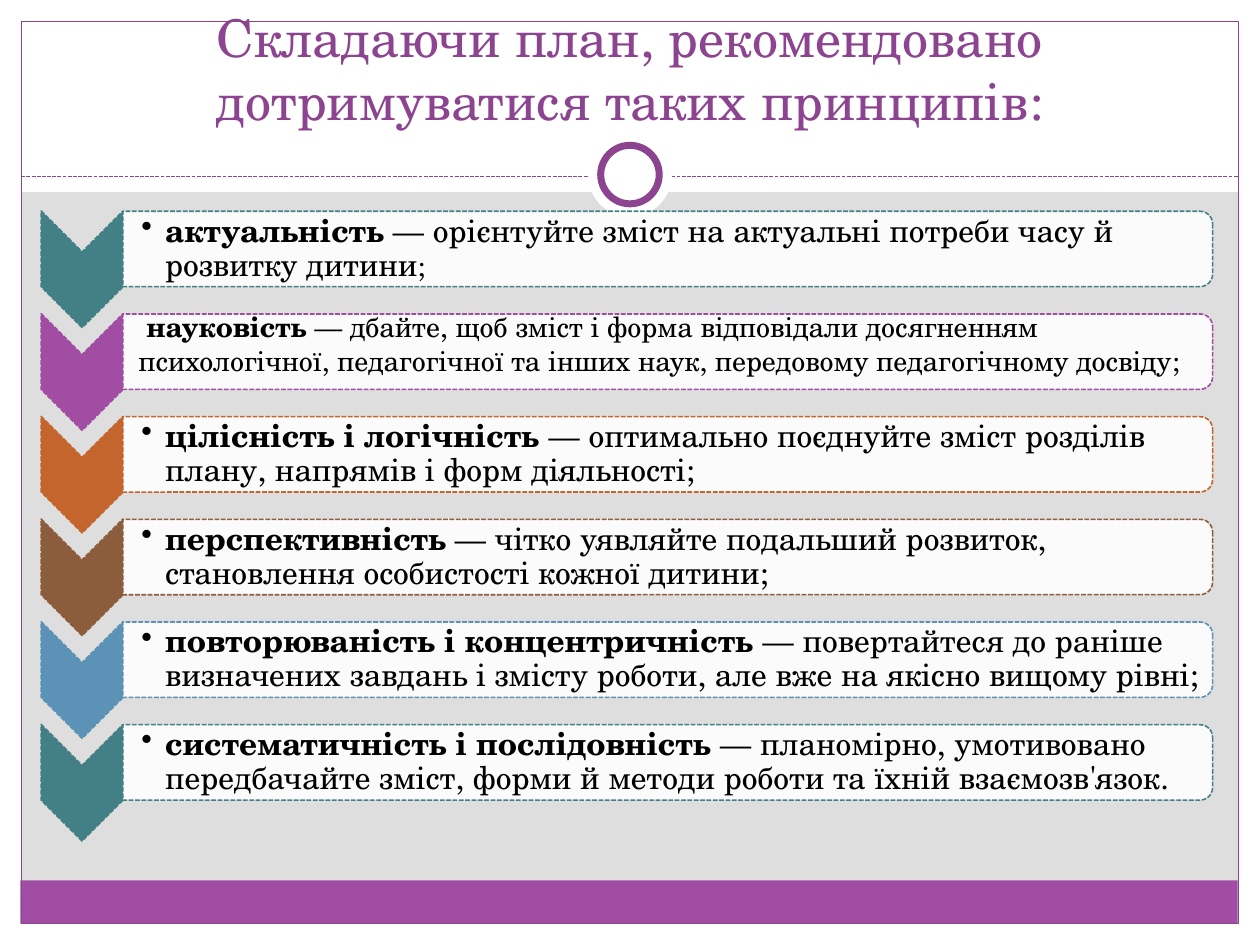
from dataclasses import dataclass

from lxml import etree
from pptx import Presentation
from pptx import util as u
from pptx.dml.color import RGBColor
from pptx.enum import dml, shapes, text
from pptx.oxml import ns


@dataclass(frozen=True)
class Theme:
    font: str = "TeX Gyre Schola"
    background: str = "DEDEDE"
    white: str = "FFFFFF"
    ink: str = "000000"
    purple: str = "A04DA3"
    dark_purple: str = "8D4490"
    teal: str = "438086"
    orange: str = "C4652D"
    brown: str = "8B5D3D"
    blue: str = "5C92B5"
    title_size: float = 29.7
    body_size: float = 18
    small_size: float = 16


theme = Theme()
Kind = shapes.MSO_SHAPE


def add_box(kind, left, top, width, height, fill=None, line=None, weight=0.75, dashed=False):
    shape = slide.shapes.add_shape(kind, u.Cm(left), u.Cm(top), u.Cm(width), u.Cm(height))
    shape.shadow.inherit = False
    if fill:
        shape.fill.solid()
        shape.fill.fore_color.rgb = RGBColor.from_string(fill)
    else:
        shape.fill.background()
    if line:
        shape.line.color.rgb = RGBColor.from_string(line)
        shape.line.width = u.Pt(weight)
        if dashed:
            shape.line.dash_style = dml.MSO_LINE.SQUARE_DOT
    else:
        shape.line.fill.background()
    return shape


def add_run(paragraph, content, size=theme.body_size, color=theme.ink, bold=False):
    run = paragraph.add_run()
    run.text = content
    run.font.name = theme.font
    run.font.size = u.Pt(size)
    run.font.bold = bold
    run.font.color.rgb = RGBColor.from_string(color)


presentation = Presentation()
presentation.slide_width, presentation.slide_height = u.Cm(25.4), u.Cm(19.05)
slide = presentation.slides.add_slide(presentation.slide_layouts[5])
slide.background.fill.solid()
slide.background.fill.fore_color.rgb = RGBColor.from_string(theme.background)

# White margins, footer band and frame
margin = 0.43
for left, top, width, height in [
    (0, 19.05 - margin, 25.4, margin),
    (0, 0, 25.4, 3.87),
    (0, 0, margin, 19.05),
    (25.4 - margin, 0, margin, 19.05),
]:
    add_box(Kind.RECTANGLE, left, top, width, height, fill=theme.white)
add_box(Kind.RECTANGLE, 0.41, 17.75, 24.54, 0.87, fill=theme.purple)
add_box(Kind.RECTANGLE, margin, margin, 25.4 - 2 * margin, 18.19, line=theme.dark_purple)

# Dashed divider with a ring
divider = slide.shapes.add_connector(
    shapes.MSO_CONNECTOR.STRAIGHT, u.Cm(margin), u.Cm(3.56), u.Cm(25.4 - margin), u.Cm(3.56))
divider.line.color.rgb = RGBColor.from_string(theme.dark_purple)
divider.line.width = u.Pt(0.75)
divider.line.dash_style = dml.MSO_LINE.SQUARE_DOT
etree.SubElement(divider._element.spPr, ns.qn("a:effectLst"))
add_box(Kind.OVAL, 11.85, 2.67, 1.7, 1.7, fill=theme.white)
add_box(Kind.OVAL, 12.11, 2.93, 1.18, 1.18, fill=theme.white, line=theme.dark_purple, weight=4)

# Title, brought in front of the white band
title = slide.shapes.title
title.left, title.top, title.width, title.height = u.Cm(0.85), u.Cm(0.64), u.Cm(23.7), u.Cm(2.12)
title.text_frame.auto_size = text.MSO_AUTO_SIZE.NONE
title.text_frame.vertical_anchor = text.MSO_ANCHOR.BOTTOM
title.text_frame.paragraphs[0].alignment = text.PP_ALIGN.CENTER
add_run(title.text_frame.paragraphs[0], "Складаючи план, рекомендовано дотримуватися таких принципів:",
        size=theme.title_size, color=theme.dark_purple)
slide.shapes._spTree.append(title._element)

# Principles: colour, bulleted, then runs of (text, size, bold)
body, small = theme.body_size, theme.small_size
principles = [
    (theme.teal, True, [
        ("актуальність", body, True),
        (" — орієнтуйте зміст на актуальні потреби часу й розвитку дитини", body, False),
        (";", small, False)]),
    (theme.purple, False, [
        (" науковість ", small, True),
        ("— дбайте, щоб зміст і форма відповідали досягненням психологічної, педагогічної "
         "та інших наук, передовому педагогічному досвіду;", small, False)]),
    (theme.orange, True, [
        ("цілісність і логічність ", body, True),
        ("— оптимально поєднуйте зміст розділів плану, напрямів і форм діяльності;", body, False)]),
    (theme.brown, True, [
        ("перспективність", body, True),
        (" — чітко уявляйте подальший розвиток, становлення особистості кожної дитини;", body, False)]),
    (theme.blue, True, [
        ("повторюваність і концентричність ", body, True),
        ("— повертайтеся до раніше визначених завдань і змісту роботи, "
         "але вже на якісно вищому рівні;", body, False)]),
    (theme.teal, True, [
        ("систематичність і послідовність ", body, True),
        ("— планомірно, умотивовано передбачайте зміст, форми й методи роботи "
         "та їхній взаємозв'язок.", body, False)]),
]
row_pitch, first_center = 2.07, 5.02
chevron_length, chevron_width = 2.35, 1.65
card_length, card_height = 21.97, 1.52
text_left, text_width, text_height = 2.49, 21.92, 1.37

for row, (color, bulleted, runs) in enumerate(principles):
    center = first_center + row * row_pitch

    # Chevron and card, both turned a quarter
    chevron = add_box(Kind.CHEVRON, 0.48, center + 0.41 - chevron_width / 2,
                      chevron_length, chevron_width, fill=color, line=color, weight=0.9, dashed=True)
    card = add_box(Kind.ROUND_2_SAME_RECTANGLE, 13.46 - card_height / 2, center - card_length / 2,
                   card_height, card_length, fill=theme.white, line=color, weight=0.9, dashed=True)
    chevron.rotation = card.rotation = 90
    card_color = card._element.spPr.find(ns.qn("a:solidFill"))[0]
    etree.SubElement(card_color, ns.qn("a:alpha"), val="90000")

    # Principle text
    label = slide.shapes.add_textbox(u.Cm(text_left), u.Cm(center - text_height / 2),
                                     u.Cm(text_width), u.Cm(text_height))
    frame = label.text_frame
    frame.word_wrap = True
    frame.vertical_anchor = text.MSO_ANCHOR.MIDDLE
    frame.margin_left = u.Cm(0.36 if bulleted else 0.3)
    frame.margin_top = frame.margin_right = u.Cm(0.03)
    frame.margin_bottom = u.Cm(0.03 if bulleted else 0.36)
    paragraph = frame.paragraphs[0]
    if bulleted:
        paragraph.line_spacing = 0.9
        properties = paragraph._p.get_or_add_pPr()
        properties.set("marL", str(u.Cm(0.48)))
        properties.set("indent", str(-u.Cm(0.48)))
        etree.SubElement(properties, ns.qn("a:buChar"), char="•")
    for content, size, bold in runs:
        add_run(paragraph, content, size=size, bold=bold)

presentation.save("out.pptx")
